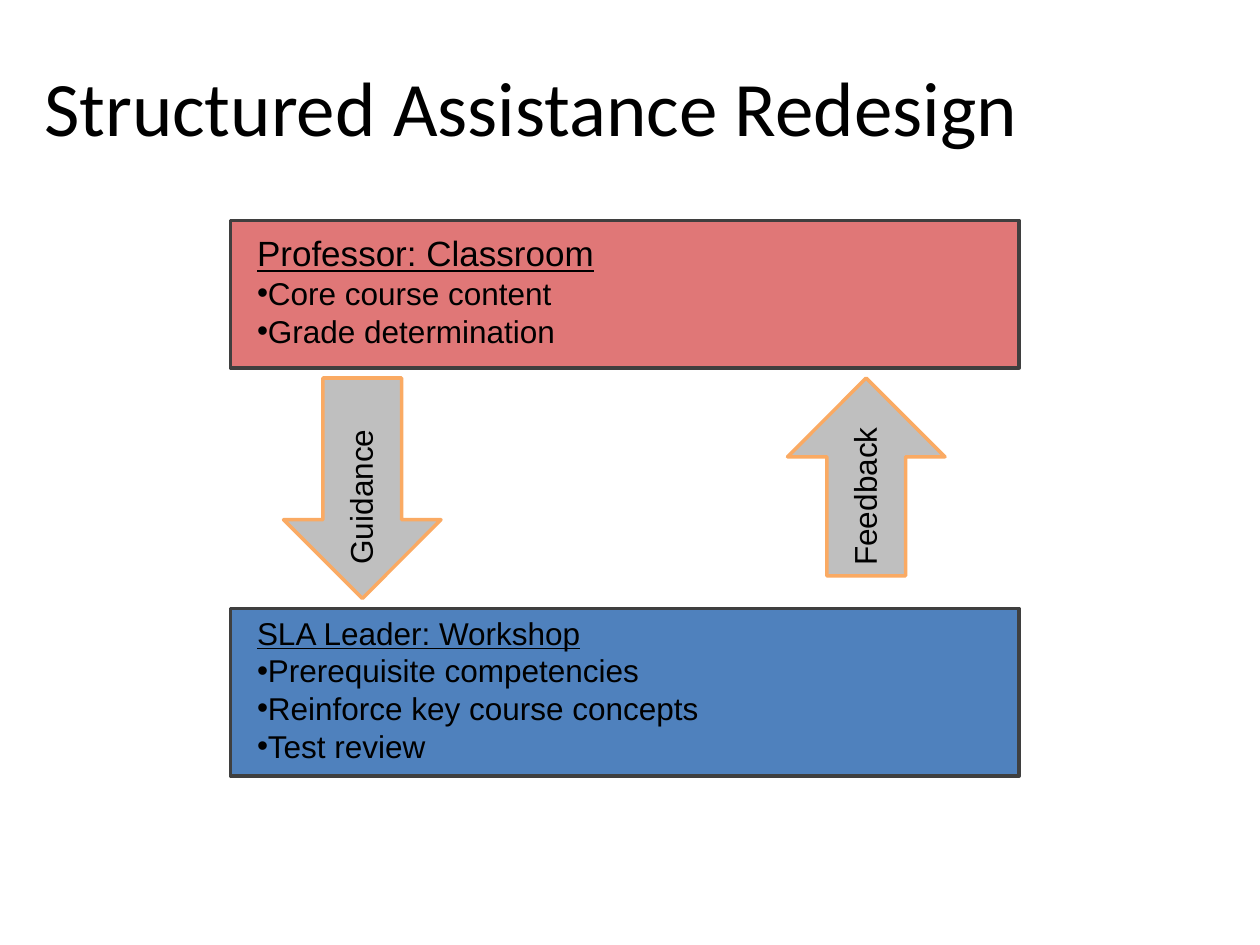
from lxml import etree
from pptx import Presentation
from pptx import util as u
from pptx.dml.color import RGBColor
from pptx.enum import shapes, text
from pptx.oxml.ns import qn

COLORS = {"ink": "000000", "border": "3F3F3F", "professor": "E07777",
          "leader": "4F81BD", "arrow": "BFBFBF", "arrow_edge": "FAAA63"}

TITLE = "Structured Assistance Redesign"

# Panel top, height, text top, heading size, heading, bullets
PANELS = [
    ("professor", 1.75, 1.17, 1.8, 20, "Professor: Classroom",
     ["Core course content", "Grade determination"]),
    ("leader", 4.83, 1.33, 4.83, 18, "SLA Leader: Workshop",
     ["Prerequisite competencies", "Reinforce key course concepts", "Test review"]),
]
PANEL_LEFT, PANEL_WIDTH = 1.83, 6.26
TEXT_LEFT, TEXT_WIDTH = 2, 5.93

# Label, arrow rotation, arrow place, label place
ARROWS = [
    ("Guidance", 90, (2, 3.25, 1.75, 1.25), (2.18, 3.57, 1.44, 0.46)),
    ("Feedback", 270, (6.09, 3.16, 1.57, 1.25), (6.22, 3.62, 1.36, 0.46)),
]


def color(name):
    return RGBColor.from_string(COLORS[name])


def add_block(slide, kind, place, fill, edge, rotation=0):
    block = slide.shapes.add_shape(kind, *map(u.Inches, place))
    block.rotation = rotation
    block.shadow.inherit = False
    block.fill.solid()
    block.fill.fore_color.rgb = color(fill)
    block.line.color.rgb = color(edge)
    block.line.width = u.Pt(2)


def add_bullet(para, font):
    properties = para._p.get_or_add_pPr()
    tint = etree.SubElement(properties, qn("a:buClr"))
    etree.SubElement(tint, qn("a:srgbClr")).set("val", COLORS["ink"])
    etree.SubElement(properties, qn("a:buFont")).set("typeface", font)
    etree.SubElement(properties, qn("a:buChar")).set("char", "•")


def write(para, words, size=18, font="Arial", underline=False, bullet=False):
    para.alignment = text.PP_ALIGN.LEFT
    if bullet:
        add_bullet(para, font)
    span = para.add_run()
    span.text = words
    span.font.size = u.Pt(size)
    span.font.name = font
    span.font.underline = underline
    span.font.color.rgb = color("ink")


def add_text(slide, place, lines, rotation=0):
    """Add a text box; each line is a pair of words and format keywords."""
    box = slide.shapes.add_textbox(*map(u.Inches, place))
    box.rotation = rotation
    frame = box.text_frame
    frame.word_wrap = True
    frame.vertical_anchor = text.MSO_ANCHOR.TOP
    frame.margin_left = frame.margin_right = u.Inches(0.04)
    frame.margin_top = frame.margin_bottom = u.Inches(0.04)
    for index, (words, style) in enumerate(lines):
        para = frame.add_paragraph() if index else frame.paragraphs[0]
        write(para, words, **style)


def add_title(slide):
    title = slide.shapes.title
    title.left, title.top = u.Inches(0.25), u.Inches(0.42)
    title.width, title.height = u.Inches(8.5), u.Inches(0.83)
    title.text_frame.vertical_anchor = text.MSO_ANCHOR.MIDDLE
    write(title.text_frame.paragraphs[0], TITLE, size=44, font="Calibri")


def main():
    deck = Presentation()
    deck.slide_width, deck.slide_height = u.Inches(10), u.Inches(7.5)
    page = deck.slides.add_slide(deck.slide_layouts[5])
    add_title(page)

    for fill, top, height, *_ in PANELS:
        add_block(page, shapes.MSO_SHAPE.RECTANGLE,
                  (PANEL_LEFT, top, PANEL_WIDTH, height), fill, "border")

    for _, _, height, top, size, heading, bullets in PANELS:
        lines = [(heading, {"size": size, "underline": True})]
        lines += [(words, {"bullet": True}) for words in bullets]
        add_text(page, (TEXT_LEFT, top, TEXT_WIDTH, height), lines)

    for label, rotation, arrow_place, label_place in ARROWS:
        add_block(page, shapes.MSO_SHAPE.RIGHT_ARROW, arrow_place,
                  "arrow", "arrow_edge", rotation)
        add_text(page, label_place, [(label, {})], rotation=270)

    deck.save("out.pptx")


if __name__ == "__main__":
    main()
